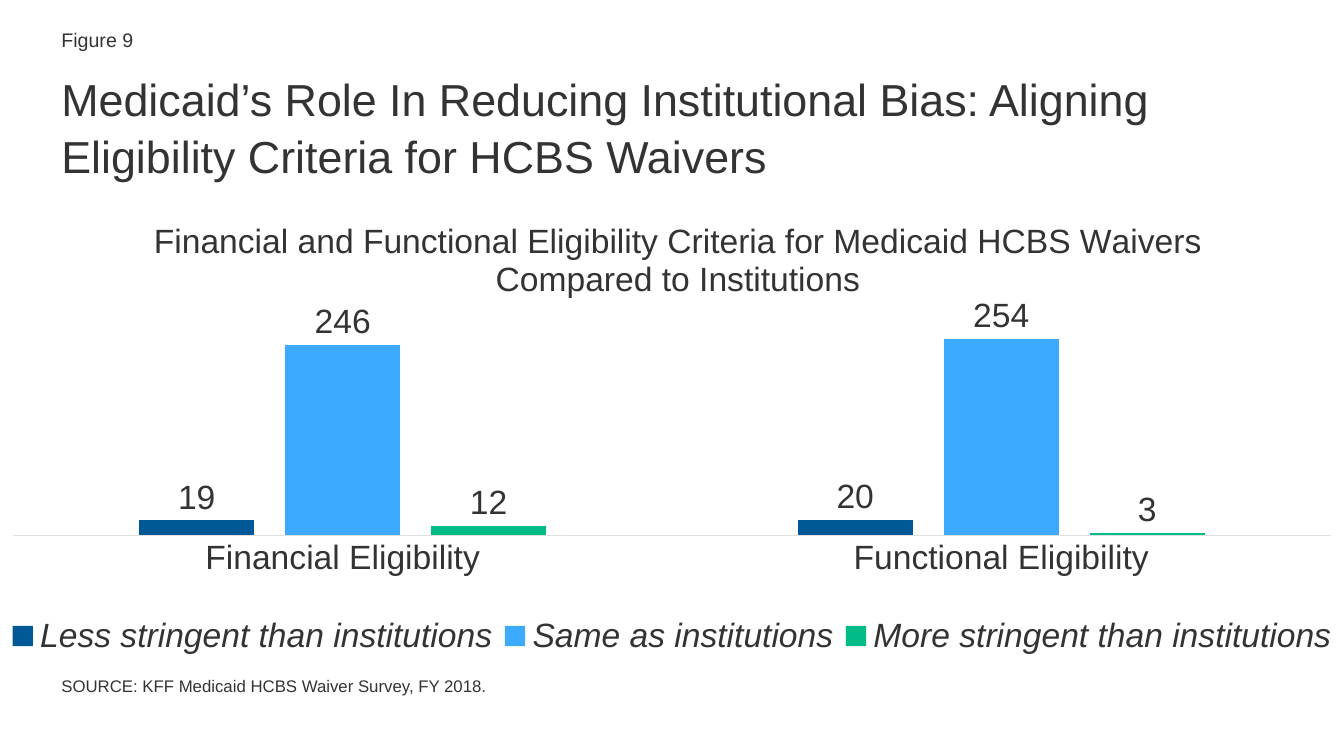
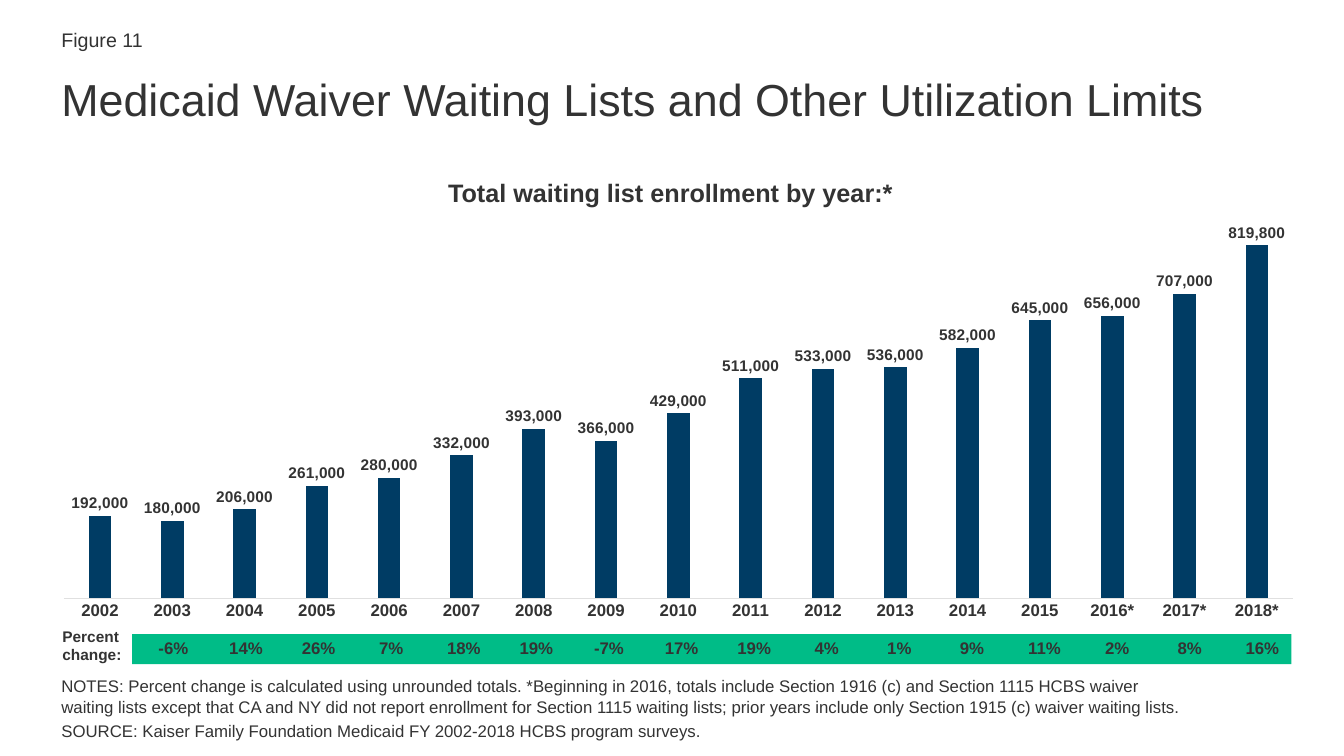
from lxml import etree
from pptx import Presentation
from pptx.chart.data import CategoryChartData
from pptx.dml.color import RGBColor
from pptx.enum.chart import XL_CHART_TYPE, XL_LABEL_POSITION, XL_LEGEND_POSITION, XL_TICK_MARK
from pptx.enum.shapes import MSO_SHAPE
from pptx.enum.text import MSO_ANCHOR, PP_ALIGN
from pptx.oxml.ns import qn
from pptx.util import Inches, Pt

FONT = "Arial"
INK, AXIS = "333333", "E0E0E0"
BLUE, SKY, GREEN, NAVY = "005996", "3CABFD", "00BC87", "003C64"
MARGIN = 0.51

ELIGIBILITY = {
    "figure": "Figure 9",
    "title": "Medicaid’s Role In Reducing Institutional Bias: Aligning Eligibility Criteria for HCBS Waivers",
    "chart_title": "Financial and Functional Eligibility Criteria for Medicaid HCBS Waivers Compared to Institutions",
    "categories": ["Financial Eligibility", "Functional Eligibility"],
    "series": [
        ("Less stringent than institutions", [19, 20], BLUE),
        ("Same as institutions", [246, 254], SKY),
        ("More stringent than institutions", [12, 3], GREEN),
    ],
    "notes": ["SOURCE: KFF Medicaid HCBS Waiver Survey, FY 2018."],
}

WAITING = {
    "figure": "Figure 11",
    "title": "Medicaid Waiver Waiting Lists and Other Utilization Limits",
    "chart_title": "Total waiting list enrollment by year:*",
    "categories": [f"{year}*" if year >= 2016 else str(year) for year in range(2002, 2019)],
    "series": [
        ("Series 1", [192000, 180000, 206000, 261000, 280000, 332000, 393000, 366000, 429000,
                      511000, 533000, 536000, 582000, 645000, 656000, 707000, 819800], NAVY),
    ],
    "change_label": "Percent change:",
    "changes": ["-6%", "14%", "26%", "7%", "18%", "19%", "-7%", "17%", "19%",
                "4%", "1%", "9%", "11%", "2%", "8%", "16%"],
    "notes": [
        "NOTES: Percent change is calculated using unrounded totals. *Beginning in 2016, totals include "
        "Section 1916 (c) and Section 1115 HCBS waiver waiting lists except that CA and NY did not report "
        "enrollment for Section 1115 waiting lists; prior years include only Section 1915 (c) waiver waiting lists.",
        "SOURCE: Kaiser Family Foundation Medicaid FY 2002-2018 HCBS program surveys.",
    ],
}


def color(hex_value):
    return RGBColor.from_string(hex_value)


def style(font, size, bold=False, italic=False):
    font.name, font.size = FONT, Pt(size)
    font.bold, font.italic = bold, italic
    font.color.rgb = color(INK)


def add_text(slide, box, paragraphs, size, bold=False, align=PP_ALIGN.LEFT,
             anchor=MSO_ANCHOR.TOP, line_spacing=1.0):
    frame = slide.shapes.add_textbox(*map(Inches, box)).text_frame
    frame.word_wrap = True
    frame.vertical_anchor = anchor
    for index, text in enumerate(paragraphs):
        paragraph = frame.add_paragraph() if index else frame.paragraphs[0]
        paragraph.alignment = align
        paragraph.line_spacing = line_spacing
        if index:
            paragraph.space_before = Pt(size * 0.2)
        run = paragraph.add_run()
        run.text = text
        style(run.font, size, bold)


def add_figure_slide(deck, content):
    """Add a slide with the figure number, title and notes that all figures share."""
    slide = deck.slides.add_slide(deck.slide_layouts[6])
    add_text(slide, (MARGIN, 0.22, 5.15, 0.35), [content["figure"]], 14, anchor=MSO_ANCHOR.MIDDLE)
    add_text(slide, (MARGIN, 0.64, 12.32, 0.94), [content["title"]], 32, line_spacing=1.05)
    add_text(slide, (MARGIN, 6.64, 11.45, 0.75), content["notes"], 12, line_spacing=1.05)
    return slide


def set_layout(parent, before, **settings):
    """Place a chart part by fractions of the chart, its layout preceding the first tag in before."""
    for old in parent.findall(qn("c:layout")):
        parent.remove(old)
    layout = etree.Element(qn("c:layout"))
    manual = etree.SubElement(layout, qn("c:manualLayout"))
    for key, value in settings.items():
        etree.SubElement(manual, qn(f"c:{key}")).set("val", str(value))
    next(child for child in parent if child.tag in map(qn, before)).addprevious(layout)


def add_columns(slide, box, content, top_value, plot, axis_size, label_size, bold=False):
    data = CategoryChartData(number_format="#,##0")
    data.categories = content["categories"]
    for name, values, _ in content["series"]:
        data.add_series(name, values)
    chart = slide.shapes.add_chart(XL_CHART_TYPE.COLUMN_CLUSTERED, *map(Inches, box), data).chart
    chart.has_title = chart.has_legend = False
    style(chart.font, label_size)

    values_axis = chart.value_axis
    values_axis.minimum_scale, values_axis.maximum_scale = 0, top_value
    values_axis.has_major_gridlines = False
    values_axis.visible = False
    category_axis = chart.category_axis
    category_axis.major_tick_mark = category_axis.minor_tick_mark = XL_TICK_MARK.NONE
    category_axis.format.line.color.rgb = color(AXIS)
    category_axis.format.line.width = Pt(0.75)
    style(category_axis.tick_labels.font, axis_size, bold)

    columns = chart.plots[0]
    columns.gap_width, columns.overlap = 219, -27
    columns.vary_by_categories = False
    for series, (_, _, fill) in zip(columns.series, content["series"]):
        series.format.fill.solid()
        series.format.fill.fore_color.rgb = color(fill)
        labels = series.data_labels
        labels.show_value = True
        labels.position = XL_LABEL_POSITION.OUTSIDE_END
        labels.number_format, labels.number_format_is_linked = "#,##0", False
        style(labels.font, label_size, bold)

    plot_area = chart.element.find(f".//{qn('c:plotArea')}")
    set_layout(plot_area, ["c:barChart"], layoutTarget="inner", xMode="edge", yMode="edge",
               **dict(zip("xywh", plot)))
    return chart


def build_eligibility(deck):
    slide = add_figure_slide(deck, ELIGIBILITY)
    chart = add_columns(slide, (0, 1.86, 13.33, 5), ELIGIBILITY, 300,
                        (0.01, 0.23, 0.98, 0.46), 24, 24)
    chart.has_title = True
    heading = chart.chart_title.text_frame.paragraphs[0].add_run()
    heading.text = ELIGIBILITY["chart_title"]
    style(heading.font, 24)
    set_layout(chart.element.find(f".//{qn('c:title')}"), ["c:overlay"],
               xMode="edge", yMode="edge", x=0.11, y=0.05)
    chart.has_legend = True
    legend = chart.legend
    legend.position = XL_LEGEND_POSITION.BOTTOM
    legend.include_in_layout = False
    style(legend.font, 24, italic=True)
    set_layout(chart.element.find(f".//{qn('c:legend')}"), ["c:overlay", "c:txPr"],
               xMode="edge", yMode="edge", x=0, y=0.84, w=1, h=0.1)


def build_waiting(deck):
    slide = add_figure_slide(deck, WAITING)
    band = slide.shapes.add_shape(MSO_SHAPE.RECTANGLE, *map(Inches, (1.31, 6.29, 11.5, 0.3)))
    band.shadow.inherit = False
    band.fill.solid()
    band.fill.fore_color.rgb = color(GREEN)
    band.line.fill.background()
    add_columns(slide, (MARGIN, 2.09, 12.32, 4.18), WAITING, 900000,
                (0.01, 0, 0.99, 0.92), 12, 11, bold=True)
    add_text(slide, (4.14, 1.71, 5.02, 0.4), [WAITING["chart_title"]], 18, True, PP_ALIGN.CENTER)
    add_text(slide, (0.52, 6.17, 0.84, 0.47), [WAITING["change_label"]], 11, True)
    step, first_center = 0.72, 1.72
    for index, change in enumerate(WAITING["changes"]):
        left = first_center + (index - 0.5) * step
        add_text(slide, (left, 6.28, step, 0.3), [change], 12, True, PP_ALIGN.CENTER)


def main():
    deck = Presentation()
    deck.slide_width, deck.slide_height = Inches(13.33), Inches(7.5)
    build_eligibility(deck)
    build_waiting(deck)
    deck.save("out.pptx")


if __name__ == "__main__":
    main()
